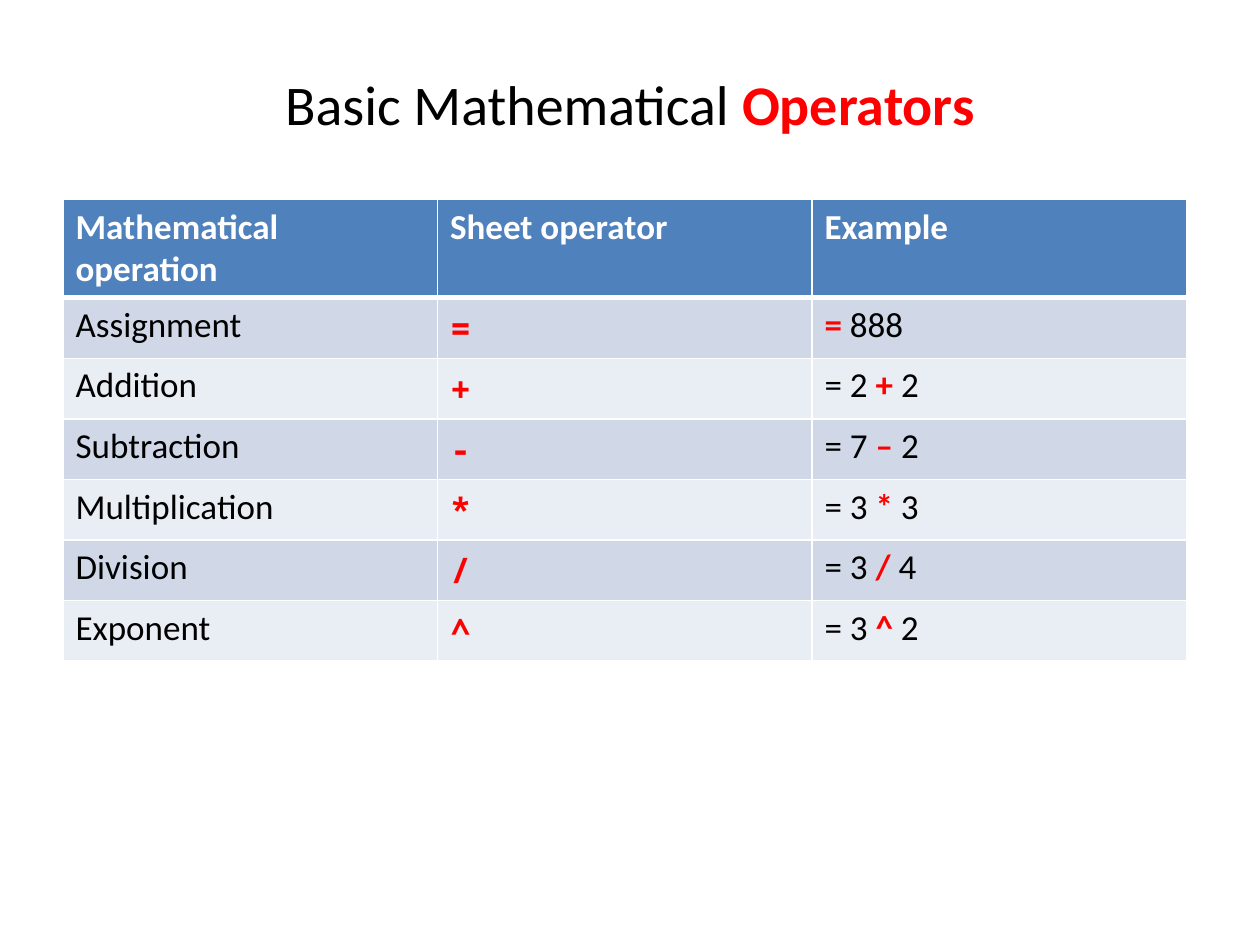
from typing import NamedTuple

from pptx import Presentation
from pptx.dml.color import RGBColor as RGB
from pptx.enum.text import MSO_ANCHOR as Anchor, PP_ALIGN as Align
from pptx.oxml import parse_xml
from pptx.oxml.ns import nsdecls
from pptx.util import Cm, Pt

BLACK = RGB(0x00, 0x00, 0x00)
WHITE = RGB(0xFF, 0xFF, 0xFF)
RED = RGB(0xFF, 0x00, 0x00)
BLUE = RGB(0x4F, 0x81, 0xBD)
BANDS = RGB(0xD0, 0xD8, 0xE8), RGB(0xE9, 0xED, 0xF4)

# Text formats
SANS, MONO = "Calibri", "Noto Sans Mono"
PLAIN = {"name": SANS, "size": Pt(20), "bold": False, "color": BLACK}
HEAD = PLAIN | {"bold": True, "color": WHITE}
MARK = PLAIN | {"bold": True, "color": RED}
SIGN = MARK | {"name": MONO}
TITLE = {"size": Pt(32)}


class Run(NamedTuple):
    text: str
    style: dict


class Op(NamedTuple):
    name: str
    sign: str
    before: str
    mark: str
    after: str


HEADS = "Mathematical operation", "Sheet operator", "Example"
OPS = [
    Op("Assignment", "=", "", "= ", "888"),
    Op("Addition", "+", "= 2 ", "+ ", "2"),
    Op("Subtraction", "-", "= 7 ", "– ", "2"),
    Op("Multiplication", "*", "= 3 ", "*", " 3"),
    Op("Division", "/", "= 3 ", "/", " 4"),
    Op("Exponent", "^", "= 3 ", "^", " 2"),
]


def write(para, runs: list[Run]) -> None:
    for text, style in runs:
        if not text:
            continue
        run = para.add_run()
        run.text = text
        for key, value in style.items():
            if key == "color":
                run.font.color.rgb = value
            else:
                setattr(run.font, key, value)


def edge(cell, top: int, bottom: int) -> None:
    """Draw white cell borders; widths are in points."""
    widths = {"lnL": 1, "lnR": 1, "lnT": top, "lnB": bottom}
    props = cell._tc.get_or_add_tcPr()
    for i, (tag, width) in enumerate(widths.items()):
        props.insert(i, parse_xml(
            f'<a:{tag} {nsdecls("a")} w="{Pt(width)}"><a:solidFill>'
            f'<a:srgbClr val="{WHITE}"/></a:solidFill></a:{tag}>'))


def fill_row(table, row: int, cells: list[list[Run]], color: RGB) -> None:
    for cell, runs in zip(table.rows[row].cells, cells):
        cell.fill.solid()
        cell.fill.fore_color.rgb = color
        edge(cell, 3 if row == 1 else 1, 3 if row == 0 else 1)
        write(cell.text_frame.paragraphs[0], runs)


def main() -> None:
    prs = Presentation()
    prs.slide_width, prs.slide_height = Cm(25.4), Cm(19.05)
    slide = prs.slides.add_slide(prs.slide_layouts[5])

    # Title
    title = slide.shapes.title
    title.left, title.top = Cm(1.27), Cm(0.76)
    title.width, title.height = Cm(22.86), Cm(2.62)
    title.text_frame.vertical_anchor = Anchor.MIDDLE
    para = title.text_frame.paragraphs[0]
    para.alignment = Align.CENTER
    write(para, [Run("Basic Mathematical ", PLAIN | TITLE),
                 Run("Operators", MARK | TITLE)])

    # Table grid
    table = slide.shapes.add_table(
        len(OPS) + 1, len(HEADS), Cm(1.27), Cm(4.02), Cm(22.65), Cm(8.56)).table
    for row in table.rows:
        row.height = Cm(1.07)
    table.rows[0].height = Cm(1.85)

    # Header and one row for each operator
    fill_row(table, 0, [[Run(text, HEAD)] for text in HEADS], BLUE)
    for i, op in enumerate(OPS):
        sample = [Run(op.before, PLAIN), Run(op.mark, MARK), Run(op.after, PLAIN)]
        cells = [[Run(op.name, PLAIN)], [Run(op.sign, SIGN)], sample]
        fill_row(table, i + 1, cells, BANDS[i % 2])

    prs.save("out.pptx")


if __name__ == "__main__":
    main()
